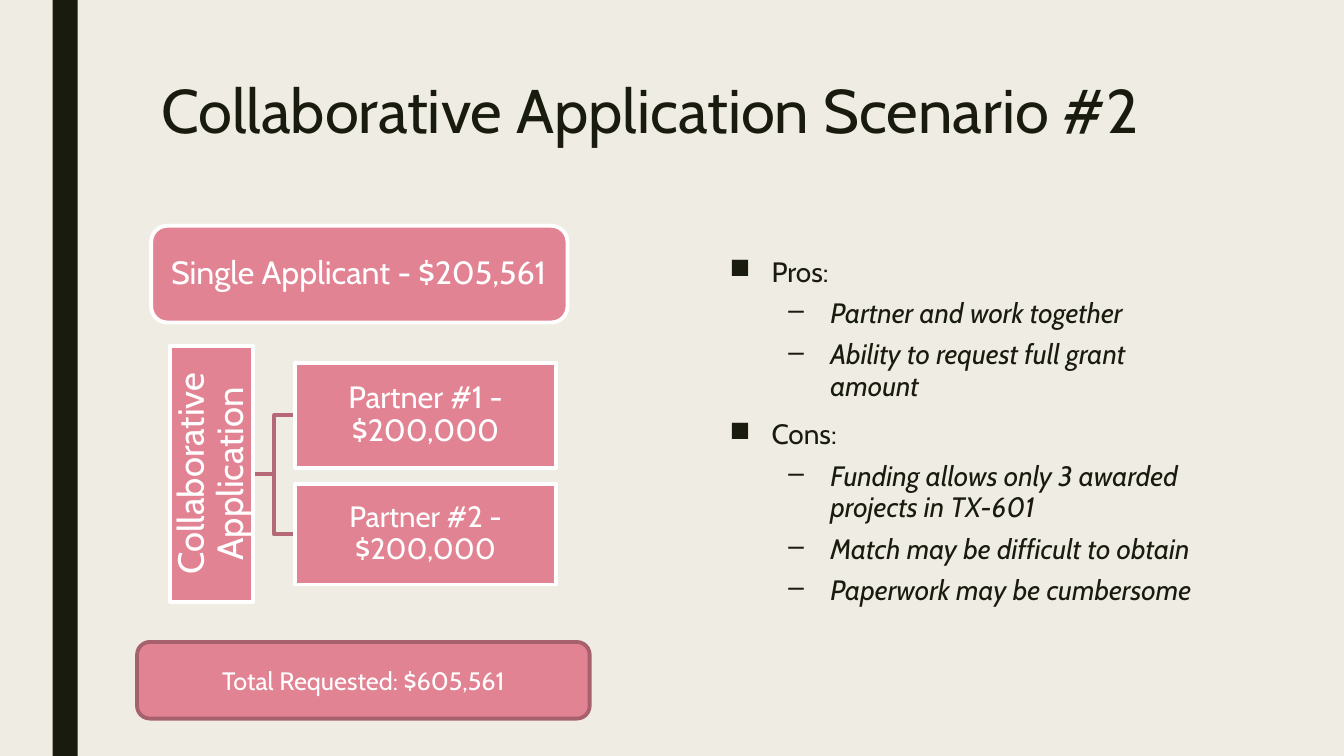
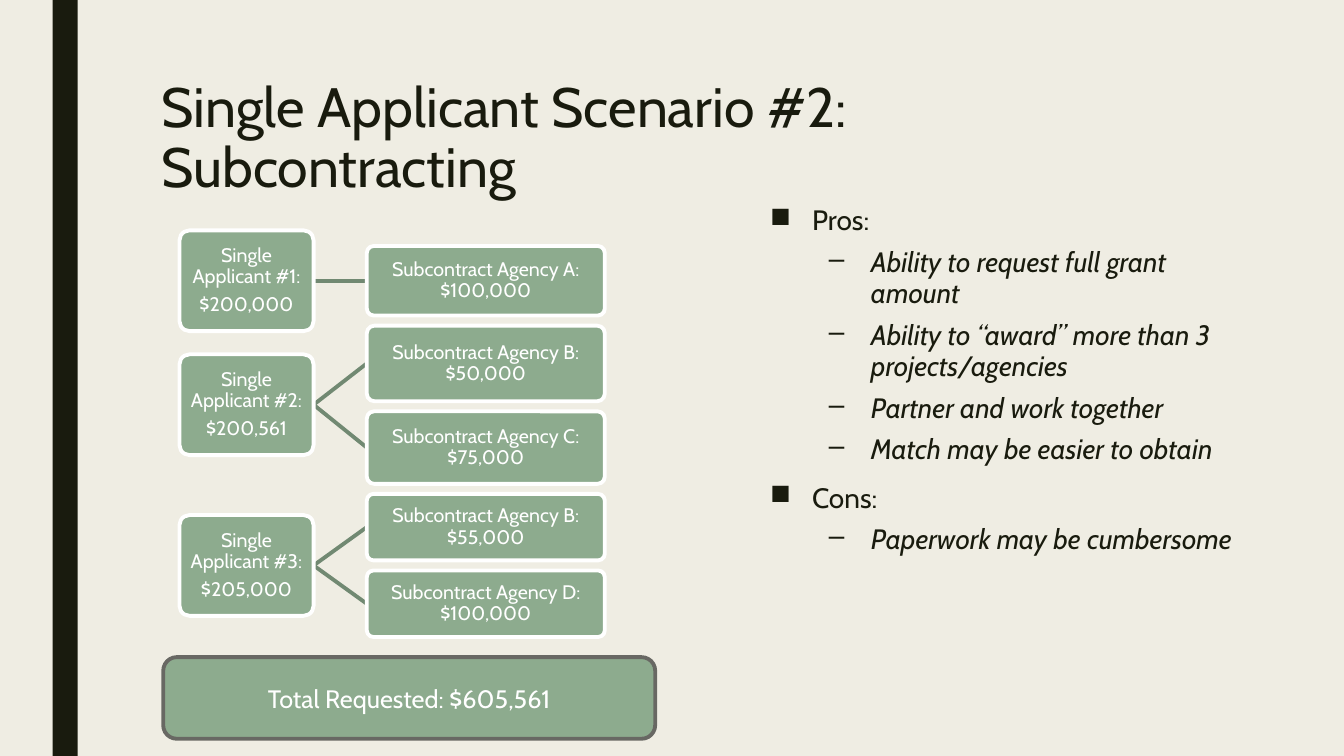
from lxml.etree import SubElement
from pptx import Presentation
from pptx.dml.color import RGBColor
from pptx.enum.shapes import MSO_CONNECTOR as LINK, MSO_SHAPE as SHAPE
from pptx.enum.text import MSO_ANCHOR as ANCHOR, MSO_AUTO_SIZE as AUTO, PP_ALIGN as ALIGN
from pptx.oxml.ns import qn
from pptx.util import Pt

CREAM = RGBColor(0xEF, 0xED, 0xE3)
INK = RGBColor(0x19, 0x1B, 0x0E)
WHITE = RGBColor(0xFF, 0xFF, 0xFF)
PINK = RGBColor(0xE2, 0x83, 0x94)
PINK_EDGE = RGBColor(0xA7, 0x61, 0x6D)
PINK_LINK = RGBColor(0xB5, 0x69, 0x77)
GREEN = RGBColor(0x8D, 0xAB, 0x8E)
GREEN_EDGE = RGBColor(0x68, 0x68, 0x63)
GREEN_LINK = RGBColor(0x71, 0x89, 0x72)

FONT = "Cabin"
LINE_WIDTH = Pt(2.75)
SLIDE_WIDTH, SLIDE_HEIGHT = 960, 540
BULLET_HANG = 30
BULLETS = [  # one entry per outline level
    {"mark": "■", "margin": 30, "before": 10, "italic": False},
    {"mark": "–", "margin": 72, "before": 5, "italic": True},
]

# Boxes are (left, top, width, height) in points.
SCENARIOS = [
    {
        "title": "Collaborative Application Scenario #2",
        "title_size": 44,
        "title_height": 61,
        "fill": PINK,
        "link_color": PINK_LINK,
        "link_kind": LINK.ELBOW,
        "node_shape": SHAPE.RECTANGLE,
        "parent": {"left": 121.7, "width": 59, "height": 183, "size": 26, "vertical": True},
        "child": {"left": 211, "width": 186, "top": 259.2, "gap": 11.5},
        "trees": [
            (["Collaborative Application"], [
                ("Partner #1 - $200,000", 74.9, 22),
                ("Partner #2 - $200,000", 72, 21),
            ]),
        ],
        "applicant": ("Single Applicant - $205,561", (108, 161.3, 297.4, 69.1)),
        "total": ("Total Requested: $605,561", (97.9, 458.6, 323.3, 54.7), PINK_EDGE),
        "points_box": (514, 180, 350, 344),
        "points": [
            ("Pros:", ["Partner and work together",
                       "Ability to request full grant amount"]),
            ("Cons:", ["Funding allows only 3 awarded projects in TX-601",
                       "Match may be difficult to obtain",
                       "Paperwork may be cumbersome"]),
        ],
    },
    {
        "title": "Single Applicant Scenario #2: Subcontracting",
        "title_size": 39.6,
        "title_height": 82,
        "fill": GREEN,
        "link_color": GREEN_LINK,
        "link_kind": LINK.STRAIGHT,
        "node_shape": SHAPE.ROUNDED_RECTANGLE,
        "parent": {"left": 128.2, "width": 95.8, "height": 72, "size": 14, "vertical": False},
        "child": {"left": 262, "width": 170, "top": 175.7, "gap": 7.2},
        "trees": [
            (["Single Applicant #1:", "$200,000"], [
                ("Subcontract Agency A: $100,000", 49.7, 14),
            ]),
            (["Single Applicant #2:", "$200,561"], [
                ("Subcontract Agency B: $50,000", 54, 14),
                ("Subcontract Agency C: $75,000", 51.8, 14),
            ]),
            (["Single Applicant #3:", "$205,000"], [
                ("Subcontract Agency B: $55,000", 47.5, 14),
                ("Subcontract Agency D: $100,000", 47.5, 14),
            ]),
        ],
        "applicant": None,
        "total": ("Total Requested: $605,561", (116.6, 469.4, 351.4, 58.3), GREEN_EDGE),
        "points_box": (543, 143.3, 350, 367),
        "points": [
            ("Pros:", ["Ability to request full grant amount",
                       "Ability to “award” more than 3 projects/agencies",
                       "Partner and work together",
                       "Match may be easier to obtain"]),
            ("Cons:", ["Paperwork may be cumbersome"]),
        ],
    },
]


def set_all(target, values):
    for name, value in values.items():
        setattr(target, name, value)


def place(shape, box):
    set_all(shape, dict(zip(("left", "top", "width", "height"), map(Pt, box))))


def add_text(frame, text, size, color, italic=False, first=False, **para_format):
    para = frame.paragraphs[0] if first else frame.add_paragraph()
    set_all(para, para_format)
    span = para.add_run()
    span.text = text
    set_all(span.font, {"name": FONT, "size": Pt(size), "italic": italic})
    span.font.color.rgb = color
    return para


def add_block(page, kind, box, fill, edge=None):
    block = page.shapes.add_shape(kind, *map(Pt, box))
    block.shadow.inherit = False
    block.fill.solid()
    block.fill.fore_color.rgb = fill
    if edge is None:
        block.line.fill.background()
    else:
        block.line.color.rgb = edge
        block.line.width = LINE_WIDTH
    return block


def label(block, texts, size, inset=None, align=ALIGN.CENTER, spacing=0.9):
    frame = block.text_frame
    set_all(frame, {"word_wrap": True, "vertical_anchor": ANCHOR.MIDDLE})
    if inset is not None:
        sides = ("margin_left", "margin_right", "margin_top", "margin_bottom")
        set_all(frame, dict.fromkeys(sides, Pt(inset)))
    for index, text in enumerate(texts):
        add_text(frame, text, size, WHITE, first=index == 0, alignment=align,
                 line_spacing=spacing, space_after=Pt(0.35 * size))


def add_node(page, scenario, box, texts, size):
    node = add_block(page, scenario["node_shape"], box, scenario["fill"], WHITE)
    if scenario["node_shape"] == SHAPE.ROUNDED_RECTANGLE:
        node.adjustments[0] = 0.1
    label(node, texts, size, inset=2)
    return node


def link(page, scenario, parent, child):
    """Join the parent's right side to the child's left side, behind both."""
    connector = page.shapes.add_connector(scenario["link_kind"], 0, 0, 0, 0)
    connector.begin_connect(parent, 3)
    connector.end_connect(child, 1)
    connector.line.color.rgb = scenario["link_color"]
    connector.line.width = LINE_WIDTH
    SubElement(connector.element.spPr, qn("a:effectLst"))
    page.shapes.element.insert(2, connector.element)


def add_trees(page, scenario):
    """Stack the children at equal gaps and centre each parent on its own."""
    parent, child = scenario["parent"], scenario["child"]
    top = child["top"]
    for parent_texts, branches in scenario["trees"]:
        first_top, nodes = top, []
        for text, height, size in branches:
            box = (child["left"], top, child["width"], height)
            nodes.append(add_node(page, scenario, box, [text], size))
            top += height + child["gap"]
        middle = (first_top + top - child["gap"]) / 2
        box = (parent["left"], middle - parent["height"] / 2, parent["width"], parent["height"])
        root = add_node(page, scenario, box, parent_texts, parent["size"])
        if parent["vertical"]:
            root.text_frame._txBody.bodyPr.set("vert", "vert270")
        for node in nodes:
            link(page, scenario, root, node)


def add_points(page, box, sections):
    frame = page.shapes.add_textbox(*map(Pt, box)).text_frame
    frame.word_wrap = True
    lines = [line for heading, details in sections
             for line in [(heading, 0)] + [(detail, 1) for detail in details]]
    for index, (text, level) in enumerate(lines):
        style = BULLETS[level]
        para = add_text(frame, text, 20, INK, style["italic"], index == 0, level=level,
                        line_spacing=0.94, space_before=Pt(style["before"]), space_after=Pt(2))
        props = para._p.get_or_add_pPr()
        props.set("marL", str(Pt(style["margin"])))
        props.set("indent", str(-Pt(BULLET_HANG)))
        SubElement(props, qn("a:buChar"), char=style["mark"])


def add_title(page, text, size, height):
    title = page.shapes.title
    place(title, (108, 54, 756, height))
    set_all(title.text_frame, {"word_wrap": True, "auto_size": AUTO.NONE,
                               "vertical_anchor": ANCHOR.TOP})
    add_text(title.text_frame, text, size, INK, first=True,
             alignment=ALIGN.LEFT, line_spacing=0.89)


def add_scenario(deck, scenario):
    page = deck.slides.add_slide(deck.slide_layouts[5])
    add_title(page, scenario["title"], scenario["title_size"], scenario["title_height"])
    add_points(page, scenario["points_box"], scenario["points"])
    add_trees(page, scenario)
    text, box, edge = scenario["total"]
    total = add_block(page, SHAPE.ROUNDED_RECTANGLE, box, scenario["fill"], edge)
    label(total, [text], 18, spacing=1.0)
    if scenario["applicant"]:
        text, box = scenario["applicant"]
        applicant = add_block(page, SHAPE.ROUNDED_RECTANGLE, box, scenario["fill"], WHITE)
        label(applicant, [text], 23, inset=10.8, align=ALIGN.LEFT)
    return page


def style_master(deck, page):
    """Give the master its background and the dark band, which is drawn on a page first."""
    master = deck.slide_master
    master.background.fill.solid()
    master.background.fill.fore_color.rgb = CREAM
    band = add_block(page, SHAPE.RECTANGLE, (37.5, 0, 18, SLIDE_HEIGHT), INK)
    master.shapes.element.insert(2, band.element)


def main():
    deck = Presentation()
    set_all(deck, {"slide_width": Pt(SLIDE_WIDTH), "slide_height": Pt(SLIDE_HEIGHT)})
    pages = [add_scenario(deck, scenario) for scenario in SCENARIOS]
    style_master(deck, pages[0])
    deck.save("out.pptx")


if __name__ == "__main__":
    main()
